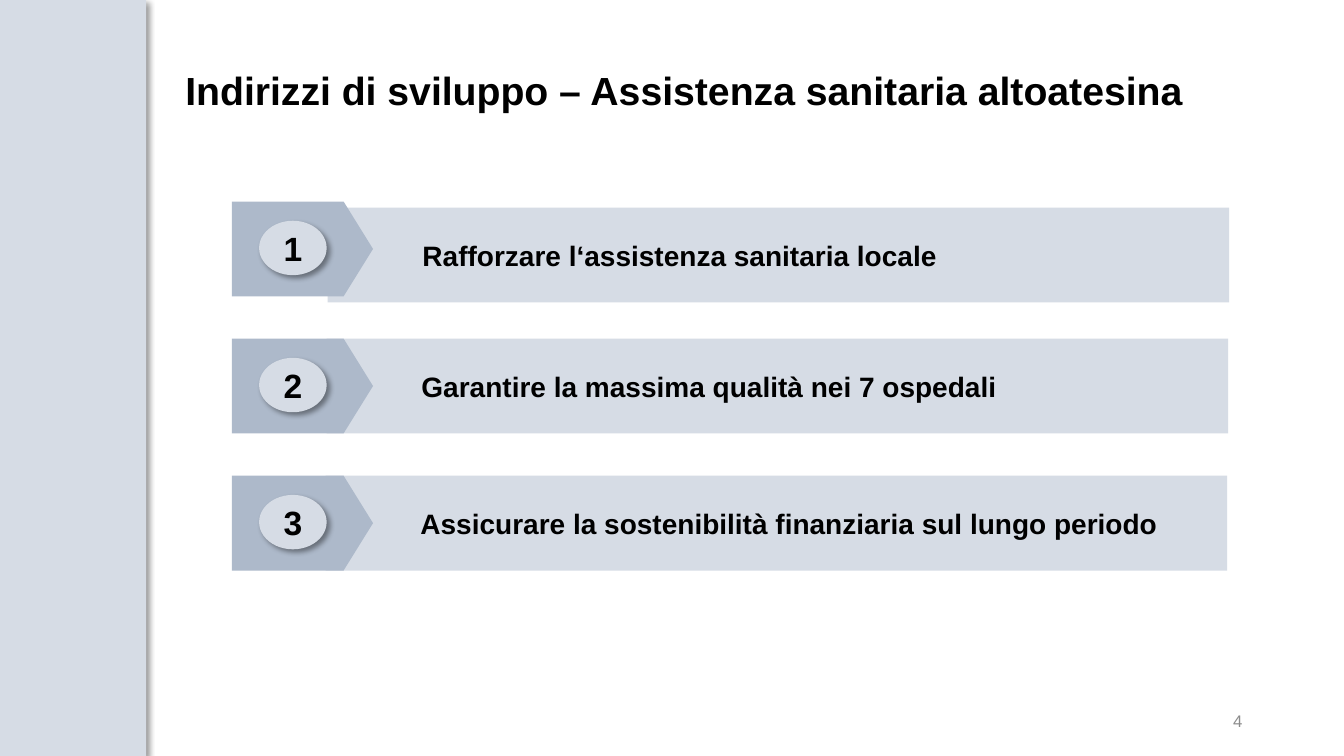
from dataclasses import dataclass

from lxml.etree import SubElement
from pptx import Presentation
from pptx.dml.color import RGBColor
from pptx.enum.shapes import MSO_SHAPE
from pptx.enum.text import MSO_ANCHOR, PP_ALIGN
from pptx.oxml.ns import qn
from pptx.util import Inches, Pt


@dataclass(frozen=True)
class Theme:
    """Colours, font and type sizes of the slide."""
    pale: str = "D6DCE5"
    steel: str = "ADB9CA"
    ink: str = "000000"
    gray: str = "8C8C8C"
    font: str = "Arial"
    title: int = 28
    label: int = 20
    digit: int = 24
    small: int = 12


THEME = Theme()
GOALS = [
    "Rafforzare l‘assistenza sanitaria locale",
    "Garantire la massima qualità nei 7 ospedali",
    "Assicurare la sostenibilità finanziaria sul lungo periodo",
]


def write(shape, text, size, color=THEME.ink, bold=True, align=PP_ALIGN.LEFT):
    """Put one middle-anchored paragraph into a shape and return it."""
    frame = shape.text_frame
    frame.word_wrap = True
    frame.vertical_anchor = MSO_ANCHOR.MIDDLE
    para = frame.paragraphs[0]
    para.text = text
    para.alignment = align
    para.font.name = THEME.font
    para.font.size = Pt(size)
    para.font.bold = bold
    para.font.color.rgb = RGBColor.from_string(color)
    return para


def add_block(slide, kind, box, fill):
    """Add a flat filled shape without outline."""
    block = slide.shapes.add_shape(kind, *map(Inches, box))
    block.shadow.inherit = False
    block.fill.solid()
    block.fill.fore_color.rgb = RGBColor.from_string(fill)
    block.line.fill.background()
    return block


def add_shade(shape):
    """Cast a soft shadow to the lower right."""
    effects = shape._element.spPr.find(qn("a:effectLst"))
    shade = SubElement(effects, qn("a:outerShdw"), blurRad=str(Pt(4)),
                       dist=str(Pt(3)), dir=str(45 * 60000),
                       algn="tl", rotWithShape="0")
    color = SubElement(shade, qn("a:srgbClr"), val=THEME.ink)
    SubElement(color, qn("a:alpha"), val="40000")


def add_side(slide, box):
    """Draw the shaded side panel."""
    add_shade(add_block(slide, MSO_SHAPE.RECTANGLE, box, THEME.pale))


def add_title(slide, box, text):
    """Write the slide title."""
    title = slide.shapes.add_textbox(*map(Inches, box))
    write(title, text, THEME.title).line_spacing = 0.9


def add_goal(slide, box, number, text, shift):
    """Draw one goal: band, arrow and numbered badge."""
    left, top, width, height = box
    inset = 0.93 + shift[0]
    band = add_block(slide, MSO_SHAPE.PENTAGON,
                     (left + inset, top + shift[1], width - 0.93, height),
                     THEME.pale)
    band.adjustments[0] = 0
    band.text_frame.margin_left = Inches(0.94)
    write(band, text, THEME.label)
    arrow = add_block(slide, MSO_SHAPE.PENTAGON, (left, top, 1.4, height),
                      THEME.steel)
    arrow.adjustments[0] = 0.31
    badge = add_block(slide, MSO_SHAPE.OVAL,
                      (left + 0.27, top + 0.19, 0.67, 0.54), THEME.pale)
    add_shade(badge)
    write(badge, str(number), THEME.digit, align=PP_ALIGN.CENTER)


def add_goals(slide, box, goals):
    """Stack the goals at equal steps down the box."""
    left, top, width, height = box
    row = 0.94
    step = (height - row) / (len(goals) - 1)
    for index, text in enumerate(goals):
        shift = (0.02 - index * 0.01, 0 if index else 0.06)
        add_goal(slide, (left, top + index * step, width, row),
                 index + 1, text, shift)


def add_page(slide, box, number):
    """Write the page number at the right of its box."""
    page = slide.shapes.add_textbox(*map(Inches, box))
    write(page, str(number), THEME.small, THEME.gray, False, PP_ALIGN.RIGHT)


def main():
    """Build and save the slide."""
    deck = Presentation()
    deck.slide_width, deck.slide_height = Inches(13.33), Inches(7.5)
    slide = deck.slides.add_slide(deck.slide_layouts[6])
    add_side(slide, (0, 0, 1.45, 7.5))
    add_title(slide, (1.74, 0.41, 11.17, 1.03),
              "Indirizzi di sviluppo – Assistenza sanitaria altoatesina")
    add_goals(slide, (2.3, 2, 9.87, 3.66), GOALS)
    add_page(slide, (9.42, 6.95, 3, 0.4), 4)
    deck.save("out.pptx")


if __name__ == "__main__":
    main()
